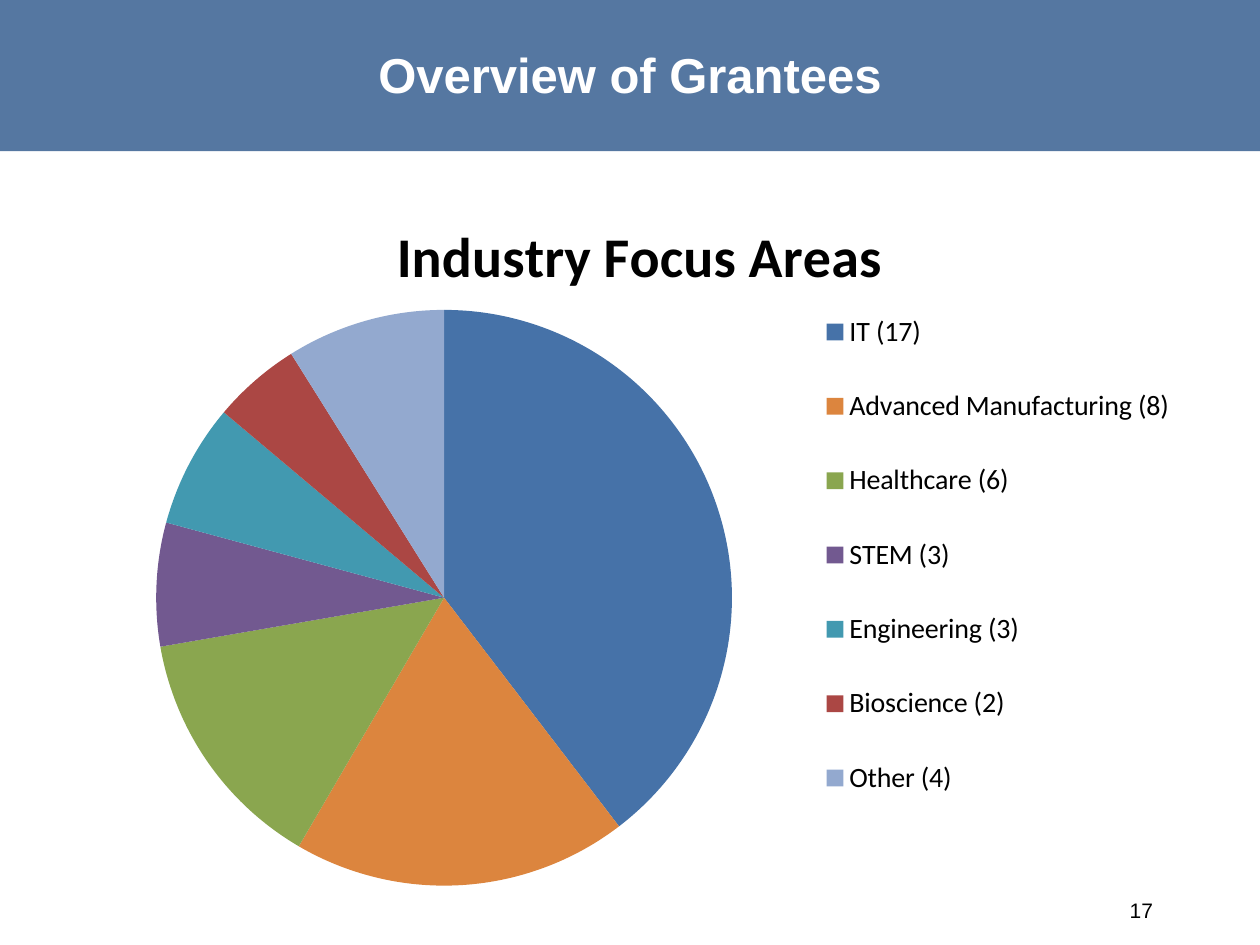
import pptx
import pptx.chart.data
import pptx.dml.color
import pptx.enum.chart
import pptx.enum.shapes
import pptx.enum.text
import pptx.oxml
import pptx.oxml.ns
import pptx.util
from pptx.util import Inches

# Content
HEADING = "Overview of Grantees"
PAGE_NUMBER = "17"
CHART_TITLE = "Industry Focus Areas"
INDUSTRIES = [  # label, share, colour
    ("IT (17)", 40, "blue"),
    ("Advanced Manufacturing (8)", 19, "orange"),
    ("Healthcare (6)", 14, "green"),
    ("STEM (3)", 7, "purple"),
    ("Engineering (3)", 7, "teal"),
    ("Bioscience (2)", 5, "red"),
    ("Other (4)", 9, "light_blue"),
]
COLOURS = {
    "banner": "5577A1", "white": "FFFFFF", "black": "000000",
    "blue": "4672A8", "orange": "DC853E", "green": "8AA64F",
    "purple": "725990", "teal": "4299B0", "red": "AB4744",
    "light_blue": "93A9CF",
}
HEADING_FONT = {"name": "Arial", "size": pptx.util.Pt(28), "bold": True}
PAGE_FONT = {"name": "Arial", "size": pptx.util.Pt(12)}
CHART_TITLE_FONT = {"name": "Calibri", "size": pptx.util.Pt(32), "bold": True}
LEGEND_FONT = {"name": "Calibri", "size": pptx.util.Pt(16)}

# Places in inches: left, top, width, height
BANNER_BOX = (0, 0, 10, 1.2)
HEADING_BOX = (0, 0, 10, 1.17)
PAGE_BOX = (6.92, 7.02, 2.33, 0.4)
CHART_BOX = (0.25, 1.33, 9.5, 5.83)
PIE_BOX = (1.24, 2.46, 4.57, 4.57)
LEGEND_BOX = (6.42, 2.18, 3, 4.45)
CHART_TITLE_CORNER = (3.07, 1.64)


def rgb(colour):
    return pptx.dml.color.RGBColor.from_string(COLOURS[colour])


def style(font, formats, colour):
    for attribute, value in formats.items():
        setattr(font, attribute, value)
    font.color.rgb = rgb(colour)


def add_label(slide, box, text, formats, colour, align):
    frame = slide.shapes.add_textbox(*map(Inches, box)).text_frame
    frame.word_wrap = True
    frame.vertical_anchor = pptx.enum.text.MSO_ANCHOR.MIDDLE
    line = frame.paragraphs[0]
    line.text = text
    line.alignment = align
    style(line.runs[0].font, formats, colour)


def place(part, box, index, inner=False):
    """Give a chart part a fixed place, as fractions of the chart."""
    qn = pptx.oxml.ns.qn
    for old in part.findall(qn("c:layout")):
        part.remove(old)
    left, top, width, height = CHART_BOX
    fractions = [(box[0] - left) / width, (box[1] - top) / height]
    fractions += [length / whole for length, whole in zip(box[2:], (width, height))]
    target = '<c:layoutTarget val="inner"/>' if inner else ""
    modes = '<c:xMode val="edge"/><c:yMode val="edge"/>'
    values = "".join(f'<c:{key} val="{value:.4f}"/>' for key, value in zip("xywh", fractions))
    part.insert(index, pptx.oxml.parse_xml(
        f'<c:layout {pptx.oxml.ns.nsdecls("c")}><c:manualLayout>'
        f"{target}{modes}{values}</c:manualLayout></c:layout>"))


presentation = pptx.Presentation()
presentation.slide_width, presentation.slide_height = Inches(10), Inches(7.5)
slide = presentation.slides.add_slide(presentation.slide_layouts[6])

# Banner, heading and page number
banner = slide.shapes.add_shape(
    pptx.enum.shapes.MSO_SHAPE.RECTANGLE, *map(Inches, BANNER_BOX))
banner.shadow.inherit = False
banner.fill.solid()
banner.fill.fore_color.rgb = rgb("banner")
banner.line.fill.background()
align = pptx.enum.text.PP_ALIGN
add_label(slide, HEADING_BOX, HEADING, HEADING_FONT, "white", align.CENTER)
add_label(slide, PAGE_BOX, PAGE_NUMBER, PAGE_FONT, "black", align.RIGHT)

# Pie of industries
shares = pptx.chart.data.CategoryChartData()
shares.categories = [label for label, _, _ in INDUSTRIES]
shares.add_series(CHART_TITLE, [share for _, share, _ in INDUSTRIES])
chart = slide.shapes.add_chart(
    pptx.enum.chart.XL_CHART_TYPE.PIE, *map(Inches, CHART_BOX), shares).chart
style(chart.font, {"name": "Calibri", "size": pptx.util.Pt(10)}, "black")
pie = chart.plots[0]
pie.vary_by_categories = True
for index, (_, _, colour) in enumerate(INDUSTRIES):
    wedge = pie.series[0].points[index].format
    wedge.fill.solid()
    wedge.fill.fore_color.rgb = rgb(colour)
    wedge.line.fill.background()

# Chart title and legend
chart.has_title = True
title = chart.chart_title
title.text_frame.text = CHART_TITLE
style(title.text_frame.paragraphs[0].runs[0].font, CHART_TITLE_FONT, "black")
title.include_in_layout = False
chart.has_legend = True
legend = chart.legend
legend.position = pptx.enum.chart.XL_LEGEND_POSITION.RIGHT
legend.include_in_layout = False
style(legend.font, LEGEND_FONT, "black")

plot_area = chart.element.find(".//" + pptx.oxml.ns.qn("c:plotArea"))
place(plot_area, PIE_BOX, 0, inner=True)
place(title._element, CHART_TITLE_CORNER, 1)
place(legend._element, LEGEND_BOX, 1)

presentation.save("out.pptx")
